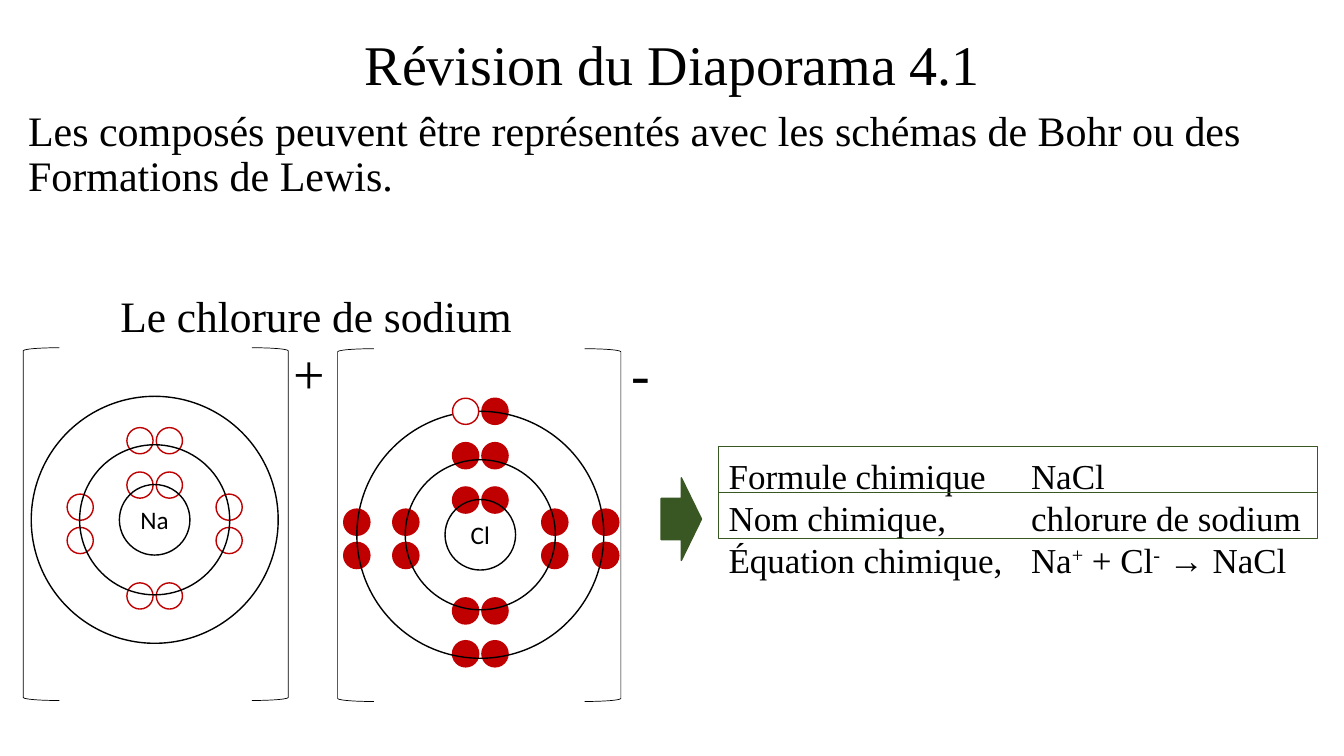
from dataclasses import dataclass

from lxml.etree import SubElement
from pptx import Presentation
from pptx.dml.color import RGBColor as Color
from pptx.enum.shapes import MSO_SHAPE as Preset
from pptx.enum.text import MSO_ANCHOR as Anchor, PP_ALIGN as Align
from pptx.oxml.ns import qn
from pptx.util import Pt


@dataclass(frozen=True)
class Theme:
    black: Color = Color(0, 0, 0)
    white: Color = Color(255, 255, 255)
    red: Color = Color(0xC0, 0, 0)
    green: Color = Color(0x38, 0x57, 0x23)
    serif: str = "Times New Roman"
    sans: str = "Calibri"
    title: int = 40
    body: int = 30
    heading: int = 31
    facts: int = 25
    symbol: int = 18
    charge: int = 40
    electron: float = 18.7


def apply(target, values):
    for name, value in values.items():
        setattr(target, name, value)


class SlideBuilder:
    def __init__(self, slide, theme):
        self.slide = slide
        self.theme = theme

    def shape(self, preset, left, top, width, height, line, fill=None, weight=1):
        shape = self.slide.shapes.add_shape(preset, Pt(left), Pt(top), Pt(width), Pt(height))
        shape.shadow.inherit = False
        if fill is None:
            shape.fill.background()
        else:
            shape.fill.solid()
            shape.fill.fore_color.rgb = fill
        shape.line.color.rgb = line
        shape.line.width = Pt(weight)

    def circle(self, x, y, radius, line, fill=None):
        self.shape(Preset.OVAL, x - radius, y - radius, 2 * radius, 2 * radius, line, fill)

    def text(self, left, top, width, height, lines, size, font=None, wrap=False,
             anchor=Anchor.TOP, tab=None, **paragraph_format):
        box = self.slide.shapes.add_textbox(Pt(left), Pt(top), Pt(width), Pt(height))
        frame = box.text_frame
        apply(frame, {"word_wrap": wrap, "vertical_anchor": anchor})
        for index, line in enumerate(lines):
            paragraph = frame.paragraphs[0] if index == 0 else frame.add_paragraph()
            apply(paragraph, paragraph_format)
            if tab:
                tabs = SubElement(paragraph._p.get_or_add_pPr(), qn("a:tabLst"))
                SubElement(tabs, qn("a:tab"), pos=str(Pt(tab)), algn="l")
            for position, part in enumerate(line.split("^")):
                run = paragraph.add_run()
                run.text = part
                apply(run.font, {"size": Pt(size), "name": font or self.theme.serif})
                run.font.color.rgb = self.theme.black
                if position % 2:
                    run._r.get_or_add_rPr().set("baseline", "30000")

    def electrons(self, x, y, offsets, fill):
        for dx, dy in offsets:
            self.circle(x + dx, y + dy, self.theme.electron / 2, self.theme.red, fill)

    def atom(self, x, y, symbol, offsets, fill, radii):
        self.text(x - 18, y - 14.4, 36, 28.8, [symbol], self.theme.symbol, self.theme.sans,
                  anchor=Anchor.MIDDLE, alignment=Align.CENTER)
        self.electrons(x, y, offsets, fill)
        for radius in radii:
            self.circle(x, y, radius, self.theme.black)

    def brackets(self, left, right, top):
        width = 25.9
        for preset, start in ((Preset.LEFT_BRACKET, left), (Preset.RIGHT_BRACKET, right - width)):
            self.shape(preset, start, top, width, 252, self.theme.black, weight=0.5)


def pair_row(y):
    return [(-10.5, y), (10.5, y)]


def pair_column(x):
    return [(x, -9), (x, 14.8)]


def main():
    presentation = Presentation()
    apply(presentation, {"slide_width": Pt(960), "slide_height": Pt(540)})
    theme = Theme()
    slide = presentation.slides.add_slide(presentation.slide_layouts[6])
    builder = SlideBuilder(slide, theme)

    builder.text(13, 10.8, 934.6, 74.9, ["Révision du Diaporama 4.1"], theme.title, wrap=True,
                 anchor=Anchor.MIDDLE, alignment=Align.CENTER, line_spacing=0.9)
    builder.text(13, 74.9, 934.6, 146.9,
                 ["Les composés peuvent être représentés avec les schémas de Bohr ou des "
                  "Formations de Lewis."], theme.body, wrap=True, line_spacing=0.9)
    builder.text(77, 203, 297.4, 44.6, ["Le chlorure de sodium"], theme.heading,
                 alignment=Align.CENTER)

    radii = (25.2, 53.6, 88.2)
    inner_shells = (pair_row(-24.8) + pair_row(-56.5) + pair_row(54.4)
                    + pair_column(-53.2) + pair_column(53.2))
    transferred, own = pair_row(-88.2)
    outer_shell = [own] + pair_row(85) + pair_column(-88.2) + pair_column(89.6)
    builder.atom(110.5, 371.3, "Na", inner_shells, theme.white, radii)
    builder.atom(343.1, 382, "Cl", inner_shells + outer_shell, theme.red, radii)
    builder.electrons(343.1, 382, [transferred], theme.white)

    builder.brackets(16.6, 205.9, 248.4)
    builder.brackets(241.2, 443.5, 249.1)
    for charge, left, width in (("+", 202.3, 37.4), ("-", 444.2, 28.1)):
        builder.text(left, 238.3, width, 55.4, [charge], theme.charge)

    builder.shape(Preset.RIGHT_ARROW, 472.3, 341.3, 28.8, 59, theme.green, theme.green)
    builder.text(513.4, 321.1, 427.7, 97.9,
                 ["Formule chimique \tNaCl",
                  "Nom chimique,\tchlorure de sodium",
                  "Équation chimique,\tNa^+^ + Cl^-^ → NaCl"],
                 theme.facts, wrap=True, tab=216)
    for row in range(2):
        builder.shape(Preset.RECTANGLE, 513.4, 319 + row * 32.8, 427.7, 32.8, theme.green)

    presentation.save("out.pptx")


if __name__ == "__main__":
    main()
